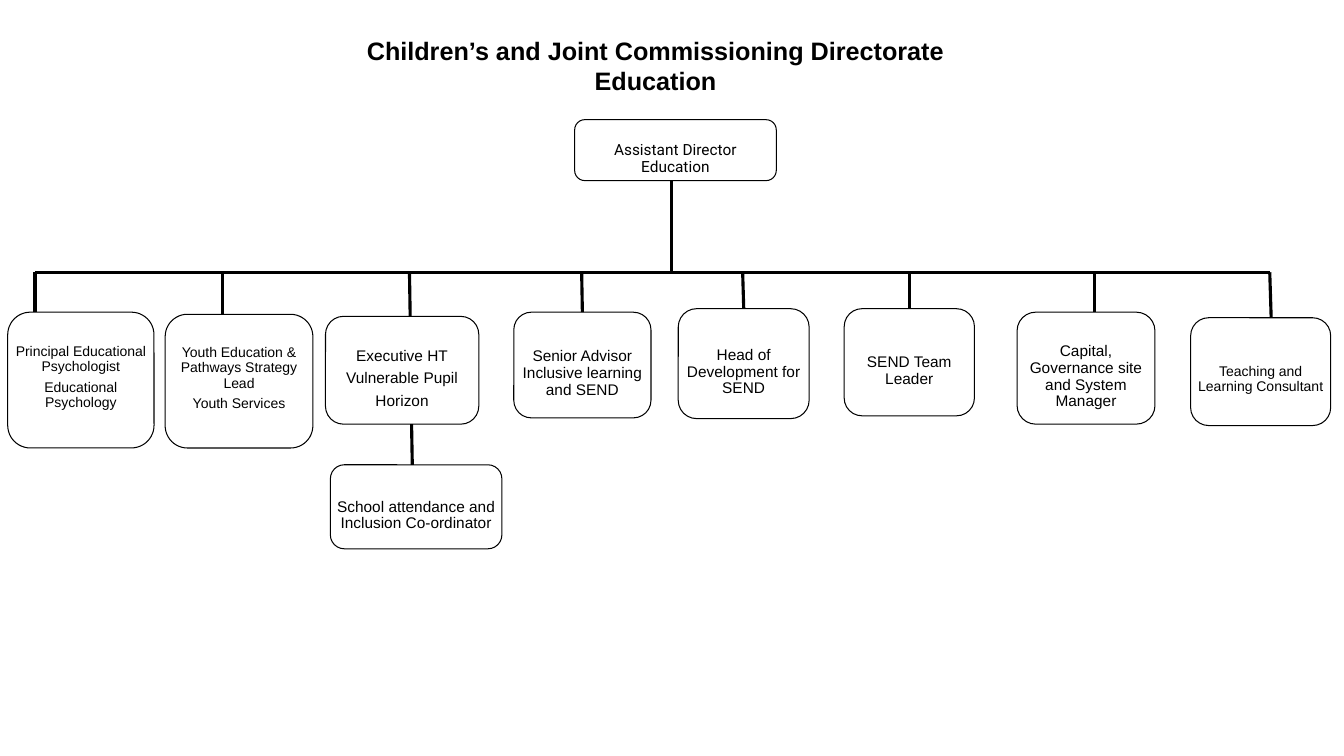
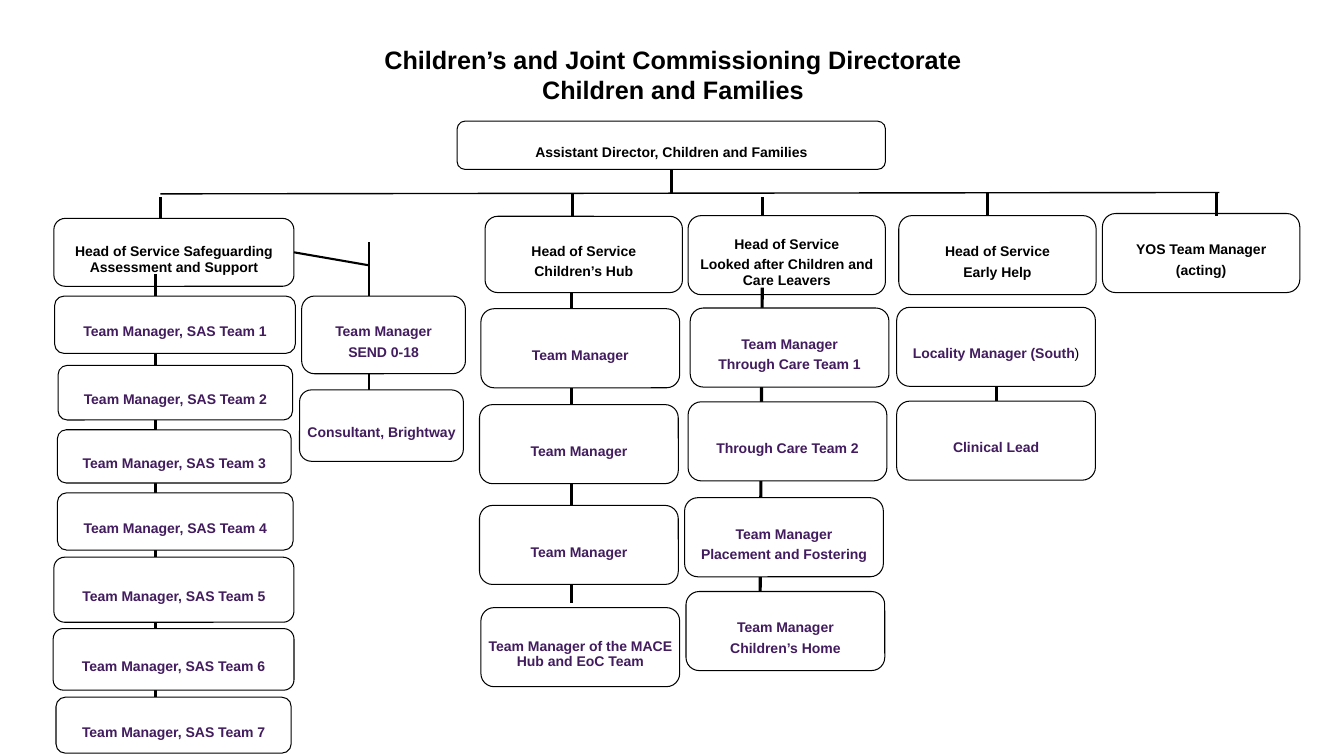
from pptx import Presentation
from pptx.dml.color import RGBColor
from pptx.enum.shapes import MSO_CONNECTOR, MSO_SHAPE
from pptx.enum.text import MSO_ANCHOR, PP_ALIGN
from pptx.oxml.ns import qn
from pptx.util import Pt
from lxml import etree

BLACK = RGBColor(0x00, 0x00, 0x00)
WHITE = RGBColor(0xFF, 0xFF, 0xFF)
PURPLE = RGBColor(0x42, 0x1C, 0x5E)
FONT = "Arial"
THICK, MEDIUM, THIN, OUTLINE = 2.25, 1.5, 1, 0.75
LINE_SPACING, SPACE_AFTER = 0.9, 0.39
HEADROOM = 1.43  # space above box text, in multiples of its size
TOP, BOTTOM, RIGHT = 0, 2, 3  # connection sites

DIRECTORATE = "Children’s and Joint Commissioning Directorate"

# Education: the director, then the posts under one spine
EDUCATION_DIRECTOR = ("Assistant Director\vEducation", 410.5, 85.5, 144, 43.5)
SPINE_Y = 194.5
# text, left, top, width, height, size, drop from x, drop to x (None: middle)
EDUCATION_POSTS = [
    ("Principal Educational Psychologist\nEducational Psychology",
     5.5, 223, 104.5, 97, 10, 25, 25),
    ("Youth Education & Pathways Strategy Lead\nYouth Services",
     118, 224.5, 105.5, 95.5, 10, 159, 159),
    ("Executive HT\nVulnerable Pupil\nHorizon",
     232.5, 226, 109.5, 77, 11, 292.5, 293),
    ("Senior Advisor Inclusive learning and SEND",
     367, 223, 98, 75.5, 11, 415.5, None),
    ("Head of Development for SEND",
     484.5, 220.5, 93.5, 78.5, 11, 530.5, None),
    ("SEND Team Leader", 603, 220.5, 93, 76.5, 11, 649.5, None),
    ("Capital, Governance site and System Manager",
     726.5, 223, 98.5, 80, 11, 782, 782),
    ("Teaching and Learning Consultant",
     850.5, 227, 100, 77, 10, 907, 908),
]
# The first posts also keep free space below their text
BOTTOM_SPACED = 2
ATTENDANCE = ("School attendance and Inclusion Co-ordinator",
              236, 332, 122.5, 60)

# Children and Families: text, left, top, width, height
FAMILIES_HEADS = [
    ("Assistant Director, Children and Families", 326.5, 86.5, 306, 34.5),
    ("Head of Service Safeguarding Assessment and Support",
     38.5, 156, 171.5, 48.5),
    ("Head of Service\nChildren’s Hub", 346.5, 154.5, 141, 54.5),
    ("Head of Service\nLooked after Children and Care Leavers",
     491.5, 154, 141, 56.5),
    ("Head of Service\nEarly Help", 642, 154, 141, 56.5),
    ("YOS Team Manager\n(acting)", 787.5, 152.5, 141, 56.5),
]
SAS_TEAMS = [  # left, top, width, height
    (39, 211.5, 172, 41), (41.5, 261, 167.5, 39), (41, 307, 167, 38),
    (41, 352, 168.5, 41), (38.5, 398, 171.5, 46.5), (38, 449, 172, 44),
    (40, 498, 168, 40),
]
TEAM_SIZE = (142, 56.5)
TEAMS = [  # text, left, top
    ("Team Manager", 343.5, 220.5),
    ("Team Manager", 342.5, 289),
    ("Team Manager", 342.5, 361),
    ("Team Manager of the MACE Hub and EoC Team", 343.5, 434),
    ("Team Manager\nThrough Care Team 1", 493, 220),
    ("Through Care Team 2", 491.5, 287),
    ("Team Manager\nPlacement and Fostering", 489, 355.5),
    ("Team Manager\nChildren’s Home", 490, 422.5),
    ("Locality Manager (South", 640.5, 219.5),
    ("Clinical Lead", 640.5, 286.5),
]
SEND_TEAMS = [
    ("Team Manager\nSEND 0-18", 215.5, 211.5, 117, 55.5),
    ("Consultant, Brightway", 214, 278.5, 117, 51),
]
# x1, y1, x2, y2, weight
FAMILIES_LINES = [
    (114.5, 138.5, 871, 137.5, THIN),
    (114.5, 141, 114.5, 156.5, THICK),
    (409, 138.5, 409, 154.5, THICK),
    (544.5, 141, 544.5, 154, THICK),
    (705.5, 138, 705.5, 154, THICK),
    (869, 138, 869, 154, THICK),
    (263.5, 173, 263.5, 292, MEDIUM),
    (111, 196, 111, 517, THICK),
    (408.5, 209.5, 408.5, 431, THICK),
    (544.5, 205.5, 543, 422, THICK),
]


def style_run(run, size, color=BLACK, bold=False, font=FONT):
    run.font.name = font
    run.font.size = Pt(size)
    run.font.color.rgb = color
    run.font.bold = bold


def add_title(slide, left, top, width, division):
    box = slide.shapes.add_textbox(Pt(left), Pt(top), Pt(width), Pt(51))
    box.text_frame.word_wrap = True
    box.text_frame.text = f"{DIRECTORATE}\n{division}"
    for paragraph in box.text_frame.paragraphs:
        paragraph.alignment = PP_ALIGN.CENTER
        for run in paragraph.runs:
            style_run(run, 18, bold=True)


def add_box(slide, text, left, top, width, height, size=10, color=BLACK,
            bold=False, font=FONT, fill=None, space_below=False):
    shape = slide.shapes.add_shape(MSO_SHAPE.ROUNDED_RECTANGLE, Pt(left),
                                   Pt(top), Pt(width), Pt(height))
    shape.shadow.inherit = False
    if fill is None:
        shape.fill.background()
    else:
        shape.fill.solid()
        shape.fill.fore_color.rgb = fill
    shape.line.color.rgb = BLACK
    shape.line.width = Pt(OUTLINE)

    frame = shape.text_frame
    frame.word_wrap = True
    frame.vertical_anchor = MSO_ANCHOR.MIDDLE
    frame.margin_left = frame.margin_right = Pt(0.75)
    headroom = HEADROOM * size
    frame.margin_top = Pt(0.75 + headroom)
    frame.margin_bottom = Pt(4.25 + (headroom if space_below else 0))
    frame.text = text
    for paragraph in frame.paragraphs:
        paragraph.alignment = PP_ALIGN.CENTER
        paragraph.line_spacing = LINE_SPACING
        paragraph.space_after = Pt(SPACE_AFTER * size)
        for run in paragraph.runs:
            style_run(run, size, color, bold, font)
    return shape


def add_line(slide, x1, y1, x2, y2, weight=THICK):
    line = slide.shapes.add_connector(MSO_CONNECTOR.STRAIGHT, Pt(x1), Pt(y1),
                                      Pt(x2), Pt(y2))
    line.line.color.rgb = BLACK
    line.line.width = Pt(weight)
    etree.SubElement(line._element.spPr, qn("a:effectLst"))
    return line


def build_education(slide):
    # Director and spine
    add_line(slide, 479.5, 129, 479.5, SPINE_Y)
    add_line(slide, 25, SPINE_Y, 907.5, SPINE_Y)
    add_box(slide, *EDUCATION_DIRECTOR, size=11, font="Roboto")

    # Posts, each with its drop from the spine
    for index, post in enumerate(EDUCATION_POSTS):
        *box, drop_from, drop_to = post
        foot = drop_from if drop_to is None else drop_to
        drop = add_line(slide, drop_from, SPINE_Y, foot, box[2])
        shape = add_box(slide, *box, space_below=index < BOTTOM_SPACED)
        if drop_to is None:
            drop.end_connect(shape, TOP)

    # Second level
    add_line(slide, 294, 303, 294.5, 332)
    add_box(slide, *ATTENDANCE, size=11)
    add_title(slide, 234.5, 21.5, 467.5, "Education")


def build_families(slide):
    # Lines lie behind the boxes
    for line in FAMILIES_LINES:
        add_line(slide, *line)
    director_line = add_line(slide, 479.5, 121, 479.5, 138)
    send_line = add_line(slide, 210, 180, 263.5, 189.5, MEDIUM)
    locality_line = add_line(slide, 711.5, 276, 711.5, 286.5)

    # Heads of service
    heads = [add_box(slide, *head, bold=True) for head in FAMILIES_HEADS]
    director_line.begin_connect(heads[0], BOTTOM)
    send_line.begin_connect(heads[1], RIGHT)

    # Teams
    sas = [(f"Team Manager, SAS Team {number}", *place)
           for number, place in enumerate(SAS_TEAMS, 1)]
    teams = [(*team, *TEAM_SIZE) for team in TEAMS]
    shapes = [add_box(slide, *team, color=PURPLE, bold=True, fill=WHITE)
              for team in sas + SEND_TEAMS + teams]
    locality, clinical = shapes[-2:]
    bracket = locality.text_frame.paragraphs[0].add_run()
    bracket.text = ")"
    style_run(bracket, 10)
    locality_line.begin_connect(locality, BOTTOM)
    locality_line.end_connect(clinical, TOP)
    add_title(slide, 256.5, 28, 448.5, "Children and Families")


def main():
    presentation = Presentation()
    presentation.slide_width = Pt(960)
    presentation.slide_height = Pt(540)
    for build in (build_education, build_families):
        build(presentation.slides.add_slide(presentation.slide_layouts[6]))
    presentation.save("out.pptx")


if __name__ == "__main__":
    main()
